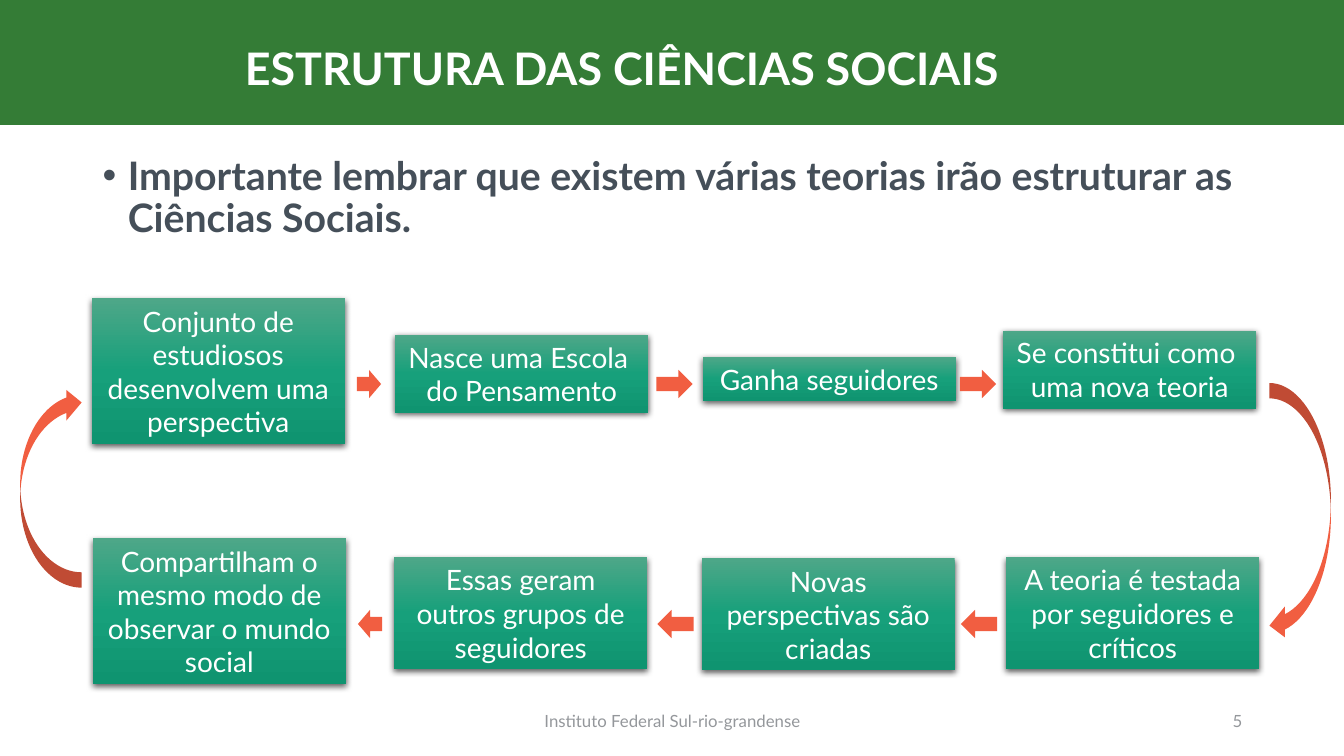
from lxml import etree
from pptx import Presentation
from pptx.dml.color import RGBColor
from pptx.enum.shapes import MSO_SHAPE as Shp
from pptx.enum.text import MSO_ANCHOR as Anc, PP_ALIGN as Al
from pptx.oxml.ns import qn
from pptx.util import Inches, Pt

GREEN, ORANGE, SLATE, GRAY, WHITE = "347C36", "F15E41", "454F59", "94979B", "FFFFFF"
BLEND = [(0, "4EA788"), (50, "17A07B"), (100, "0F9470")]
BOX_W = 2.51

# left, top, lines of text, paragraphs
STEPS = [
    (0.91, 2.96, 4, ["Conjunto de estudiosos desenvolvem uma perspectiva"]),
    (3.92, 3.32, 2, ["Nasce uma Escola ", "do Pensamento"]),
    (6.97, 3.54, 1, ["Ganha seguidores"]),
    (9.95, 3.28, 2, ["Se constitui como ", "uma nova teoria"]),
    (9.98, 5.53, 3, ["A teoria é testada por seguidores e críticos"]),
    (6.96, 5.54, 3, ["Novas perspectivas são criadas"]),
    (3.91, 5.53, 3, ["Essas geram outros grupos de seguidores"]),
    (0.92, 5.34, 4, ["Compartilham o mesmo modo de observar o mundo social"]),
]


def rgb(code):
    return RGBColor.from_string(code)


def sub(node, tag, **attrs):
    return etree.SubElement(node, qn(tag), {k: str(v) for k, v in attrs.items()})


def write(shape, lines, size, color, align=Al.CENTER, bold=False, anchor=Anc.MIDDLE):
    frame = shape.text_frame
    frame.word_wrap = True
    frame.vertical_anchor = anchor
    frame.text = "\n".join(lines)
    for para in frame.paragraphs:
        para.alignment = align
        font = para.font
        font.name, font.size, font.bold = "Lato", Pt(size), bold
        font.color.rgb = rgb(color)
    return frame


def label(slide, box, text, size, color, **style):
    return write(slide.shapes.add_textbox(*map(Inches, box)), [text], size, color, **style)


def solid(slide, kind, box, color):
    shape = slide.shapes.add_shape(kind, *map(Inches, box))
    shape.shadow.inherit = False
    shape.fill.solid()
    shape.fill.fore_color.rgb = rgb(color)
    shape.line.fill.background()
    return shape


def header(slide, left, top, width, height):
    solid(slide, Shp.RECTANGLE, (left, top, width, height), GREEN)
    label(slide, (left + 1.15, top + 0.25, 10.04, 0.84),
          "ESTRUTURA DAS CIÊNCIAS SOCIAIS", 32, WHITE, bold=True)


def intro(slide, *box):
    frame = label(slide, box, "Importante lembrar que existem várias teorias irão "
                  "estruturar as Ciências Sociais.", 28, SLATE,
                  align=Al.LEFT, bold=True, anchor=Anc.TOP)
    para = frame.paragraphs[0]
    para.line_spacing = 0.9
    para.space_before = Pt(10)
    props = para._p.get_or_add_pPr()
    props.set("marL", str(Inches(0.25)))
    props.set("indent", str(Inches(-0.25)))
    sub(props, "a:buFont", typeface="Arial")
    sub(props, "a:buChar", char="•")


def step(slide, left, top, rows, lines):
    box = (left, top, BOX_W, 0.1 + 0.337 * rows)
    shape = solid(slide, Shp.RECTANGLE, box, GREEN)
    # Vertical three-stop blend
    shape.fill.gradient()
    shape.fill.gradient_angle = 270
    props = shape._element.spPr
    stops = props.find(".//" + qn("a:gsLst"))
    for old in list(stops):
        stops.remove(old)
    for pos, color in BLEND:
        sub(sub(stops, "a:gs", pos=pos * 1000), "a:srgbClr", val=color)
    # Soft shadow below
    shade = sub(props.find(qn("a:effectLst")), "a:outerShdw", blurRad=Pt(4.5),
                dist=Pt(1.5), dir=90 * 60000, algn="ctr", rotWithShape=0)
    sub(sub(shade, "a:srgbClr", val="000000"), "a:alpha", val=63000)
    write(shape, lines, 20, WHITE)


def cycle(slide, left, top):
    for item in STEPS:
        step(slide, *item)
    # Straight arrows: top row points right, bottom row left
    for row, turn in enumerate((0, 180)):
        for x, width in ((3.34, 0.24), (6.31, 0.36), (9.32, 0.36)):
            box = (left + x + 0.01 * row, top + 0.71 + 2.38 * row, width, 0.28)
            solid(slide, Shp.RIGHT_ARROW, box, ORANGE).rotation = turn
    # Curved arrows close the loop
    for x, y, height, turn in ((12.39, 0.84, 2.56, 0), (0, 0.88, 1.99, 180)):
        box = (left + x, top + y, 0.61, height)
        solid(slide, Shp.CURVED_LEFT_ARROW, box, ORANGE).rotation = turn


def footer(slide, left, top, width, height):
    label(slide, (left, top, 4.5, height), "Instituto Federal Sul-rio-grandense", 12, GRAY)
    label(slide, (left + width - 3, top, 3, height), "5", 12, GRAY, align=Al.RIGHT)


def main():
    deck = Presentation()
    deck.slide_width, deck.slide_height = Inches(13.33), Inches(7.5)
    slide = deck.slides.add_slide(deck.slide_layouts[6])
    intro(slide, 0.92, 1.5, 11.5, 1.14)
    footer(slide, 4.42, 6.95, 8, 0.4)
    header(slide, 0, 0, 13.33, 1.24)
    cycle(slide, 0.2, 2.96)
    deck.save("out.pptx")


if __name__ == "__main__":
    main()
